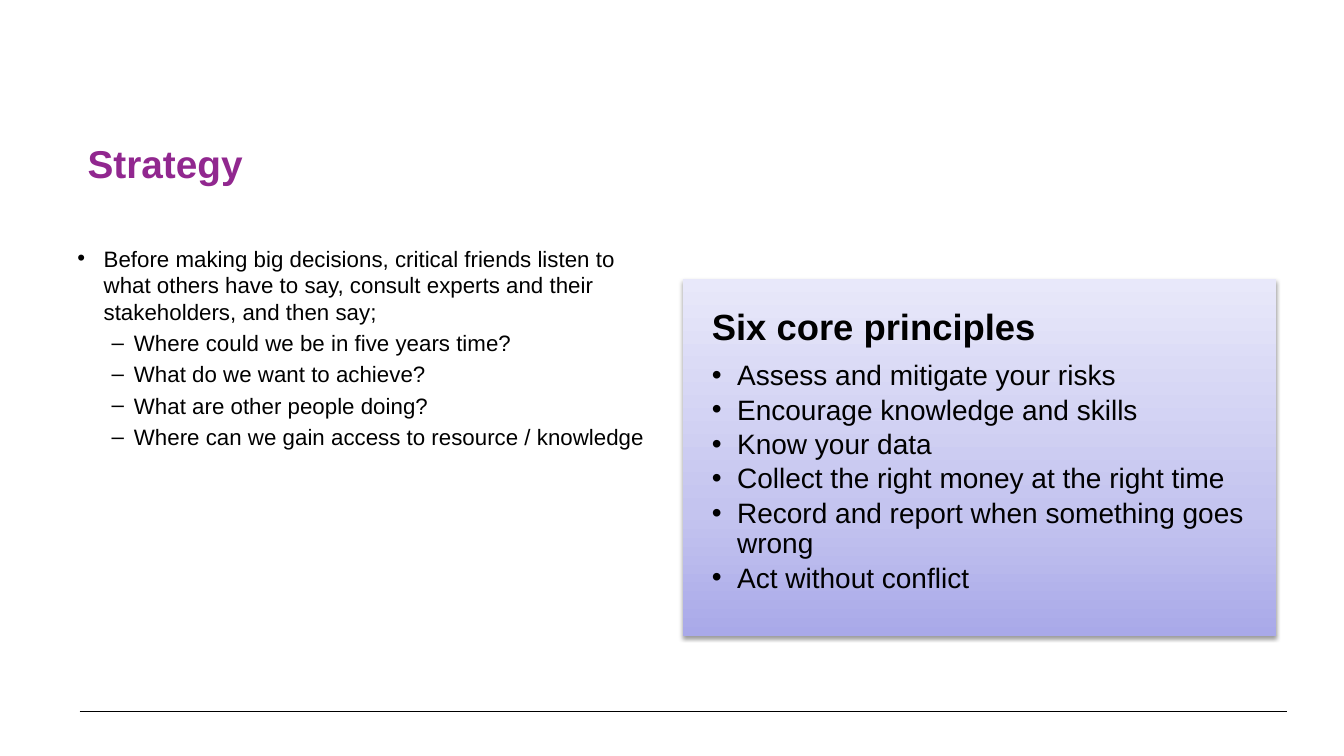
from copy import deepcopy
from lxml import etree
from pptx import Presentation
from pptx.dml.color import RGBColor
from pptx.enum.shapes import MSO_CONNECTOR, MSO_SHAPE
from pptx.enum.text import MSO_ANCHOR
from pptx.oxml.ns import qn
from pptx.util import Inches, Pt

LINE = MSO_CONNECTOR.STRAIGHT
RECT = MSO_SHAPE.RECTANGLE
TOP = MSO_ANCHOR.TOP
MIDDLE = MSO_ANCHOR.MIDDLE
HUES = {"title": "91278F", "ink": "000000", "deep": "A9A9E9",
        "mid": "C4C4EF", "pale": "E8E8FA"}
ASKS = ["Where could we be in five years time?",
        "What do we want to achieve?",
        "What are other people doing?",
        "Where can we gain access to resource / knowledge"]
RULES = ["Assess and mitigate your risks",
         "Encourage knowledge and skills",
         "Know your data",
         "Collect the right money at the right time",
         "Record and report when something goes wrong",
         "Act without conflict"]


def tint(name):
    return RGBColor.from_string(HUES[name])


def node(parent, tag, **attrs):
    return etree.SubElement(parent, qn(tag), attrs)


def write(frame, text, size, hue="ink", bold=False, mark=None, left=0, hang=0,
          before=0, after=0, pitch=1.0):
    first = not frame.paragraphs[0].runs
    para = frame.paragraphs[0] if first else frame.add_paragraph()
    if mark:
        props = para._p.get_or_add_pPr()
        props.set("marL", str(Inches(left)))
        props.set("indent", str(-Inches(hang)))
        node(props, "a:buFont", typeface="Arial")
        node(props, "a:buChar", char=mark)
    para.line_spacing = pitch
    para.space_before = Pt(0 if first else before)
    para.space_after = Pt(after)
    run = para.add_run()
    run.text = text
    run.font.name = "Arial"
    run.font.size = Pt(size)
    run.font.bold = bold
    run.font.color.rgb = tint(hue)


def set_frame(frame, side, edge, anchor=TOP):
    frame.word_wrap = True
    frame.vertical_anchor = anchor
    frame.margin_left = frame.margin_right = Inches(side)
    frame.margin_top = frame.margin_bottom = Inches(edge)
    return frame


def add_text(slide, box, anchor=TOP):
    shape = slide.shapes.add_textbox(*map(Inches, box))
    return set_frame(shape.text_frame, 0.1, 0.05, anchor)


def add_title(slide, box):
    write(add_text(slide, box, MIDDLE), "Strategy", 27.7, hue="title", bold=True)


def add_asks(slide, box):
    frame = add_text(slide, box)
    write(frame, "Before making big decisions, critical friends listen to what "
          "others have to say, consult experts and their stakeholders, and "
          "then say;", 15.9, mark="•", left=0.26, hang=0.26)
    for ask in ASKS:
        write(frame, ask, 15.9, mark="–", left=0.56, hang=0.22, before=3.2)


def shade(card):
    card.fill.gradient()
    card.fill.gradient_angle = 90
    stops = card._element.spPr.find(".//" + qn("a:gsLst"))
    stops.insert(1, deepcopy(stops[0]))
    looks = [(0, "deep"), (0.35, "mid"), (1, "pale")]
    for stop, (place, hue) in zip(card.fill.gradient_stops, looks):
        stop.position = place
        stop.color.rgb = tint(hue)


def drop_shadow(card):
    card.shadow.inherit = False
    effects = card._element.spPr.find(qn("a:effectLst"))
    outer = node(effects, "a:outerShdw", blurRad=str(Pt(3.1)),
                 dist=str(Pt(1.6)), dir="5400000", rotWithShape="0")
    color = node(outer, "a:srgbClr", val=HUES["ink"])
    node(color, "a:alpha", val="38000")


def add_card(slide, box):
    card = slide.shapes.add_shape(RECT, *map(Inches, box))
    card.line.fill.background()
    shade(card)
    drop_shadow(card)
    frame = set_frame(card.text_frame, 0.29, 0.3)
    write(frame, "Six core principles", 26, bold=True, after=9.1, pitch=0.9)
    for rule in RULES:
        write(frame, rule, 20, mark="•", left=0.25, hang=0.25, after=3, pitch=0.9)
    for para in frame.paragraphs:
        para.alignment = 1


def add_rule(slide, left, top, width):
    line = slide.shapes.add_connector(
        LINE, *map(Inches, (left, top, left + width, top)))
    line.line.color.rgb = tint("ink")
    line.line.width = Pt(0.75)
    node(line._element.spPr, "a:effectLst")


def main():
    deck = Presentation()
    deck.slide_width = Inches(13.33)
    deck.slide_height = Inches(7.5)
    slide = deck.slides.add_slide(deck.slide_layouts[6])
    add_rule(slide, 0.79, 7.06, 11.97)
    add_title(slide, (0.77, 0.99, 12, 1.25))
    add_asks(slide, (0.67, 2.38, 5.89, 4.32))
    add_card(slide, (6.77, 2.77, 5.89, 3.54))
    deck.save("out.pptx")


if __name__ == "__main__":
    main()
